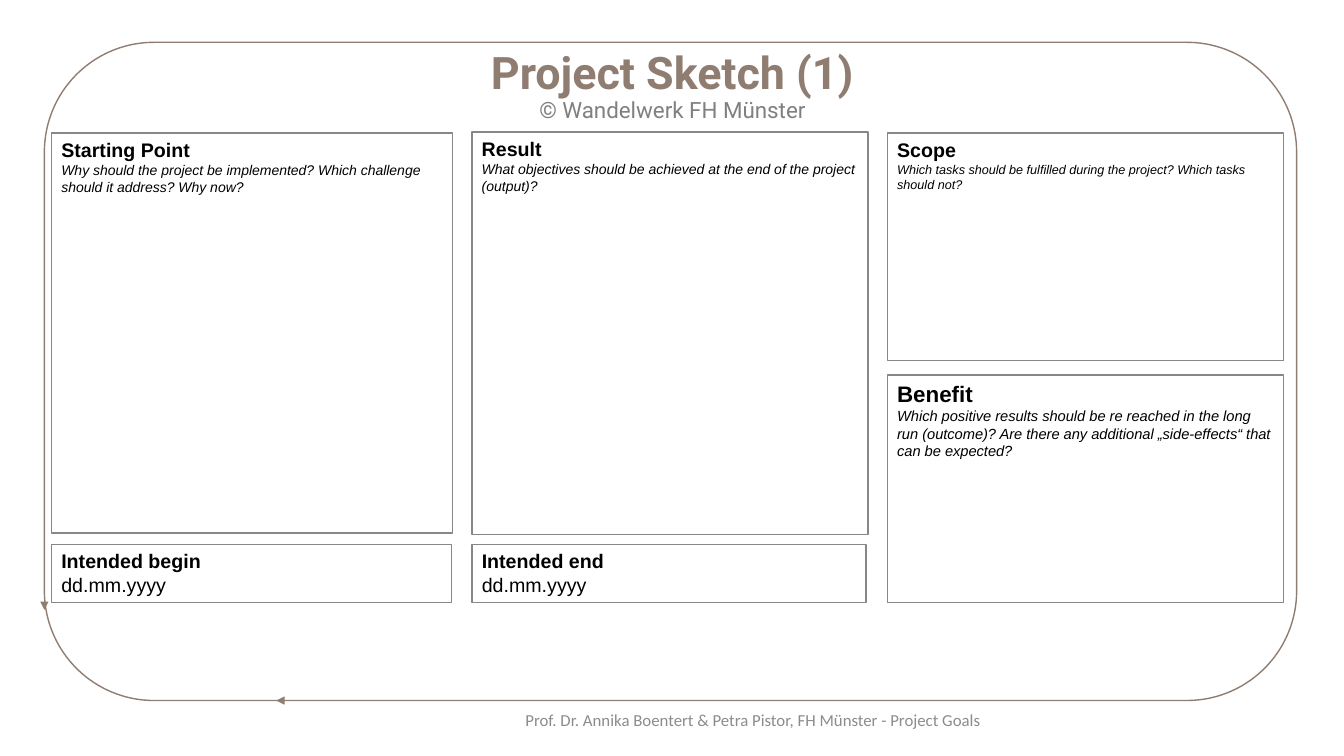
import pptx
import pptx.dml.color
import pptx.enum.shapes
import pptx.enum.text
import pptx.oxml
import pptx.util
from pptx.util import Inches

RGBColor = pptx.dml.color.RGBColor
ANCHOR = pptx.enum.text.MSO_ANCHOR
ALIGN = pptx.enum.text.PP_ALIGN
SHAPES = pptx.enum.shapes.MSO_SHAPE

BROWN = RGBColor(0x90, 0x7D, 0x71)
SUBTITLE_GREY = RGBColor(0x80, 0x80, 0x80)
FOOTER_GREY = RGBColor(0x8C, 0x8C, 0x8C)
BORDER_GREY = RGBColor(0x87, 0x87, 0x87)
WHITE = RGBColor(0xFF, 0xFF, 0xFF)
BLACK = RGBColor(0x00, 0x00, 0x00)

LEFT_X, MIDDLE_X, RIGHT_X = 0.51, 4.68, 8.8
DATE_Y, DATE_HEIGHT = 5.4, 0.58
RIGHT_WIDTH, RIGHT_HEIGHT = 3.93, 2.26

FIELDS = [
    ((LEFT_X, 1.32, 3.98, 3.97), "Starting Point", 14,
     "Why should the project be implemented? Which challenge should it address? Why now?", 10),
    ((MIDDLE_X, 1.31, 3.93, 3.99), "Result", 14,
     "What objectives should be achieved at the end of the project (output)?", 10),
    ((RIGHT_X, 1.32, RIGHT_WIDTH, RIGHT_HEIGHT), "Scope", 14,
     "Which tasks should be fulfilled during the project? Which tasks should not?", 9),
    ((RIGHT_X, 3.72, RIGHT_WIDTH, RIGHT_HEIGHT), "Benefit", 16,
     "Which positive results should be re reached in the long run (outcome)? "
     "Are there any additional „side-effects“ that can be expected?", 10.5),
]
DATES = [
    ((LEFT_X, DATE_Y, 3.97, DATE_HEIGHT), "Intended begin"),
    ((MIDDLE_X, DATE_Y, 3.91, DATE_HEIGHT), "Intended end"),
]


def style_runs(paragraph, font_name, size, color, bold=False, italic=False):
    """Format every run of a paragraph."""
    for run in paragraph.runs:
        run.font.name = font_name
        run.font.size = pptx.util.Pt(size)
        run.font.color.rgb = color
        run.font.bold = bold
        run.font.italic = italic


def add_arrow(slide, start, end):
    """Draw a brown line with an arrowhead at its end."""
    arrow = slide.shapes.add_connector(
        pptx.enum.shapes.MSO_CONNECTOR.STRAIGHT, *map(Inches, start + end))
    arrow.line.color.rgb = BROWN
    arrow.line.width = pptx.util.Pt(1)
    namespace = pptx.oxml.ns.nsdecls("a")
    arrow.line._get_or_add_ln().append(
        pptx.oxml.parse_xml(f'<a:tailEnd {namespace} type="triangle"/>'))
    arrow._element.spPr.append(pptx.oxml.parse_xml(f"<a:effectLst {namespace}/>"))


def add_frame(slide, box):
    """Draw the rounded cycle frame with its two direction arrows."""
    left, top, width, height = box
    frame = slide.shapes.add_shape(SHAPES.ROUNDED_RECTANGLE, *map(Inches, box))
    frame.shadow.inherit = False
    frame.fill.background()
    frame.line.color.rgb = BROWN
    frame.line.width = pptx.util.Pt(1)
    bottom = top + height
    add_arrow(slide, (left + 2.79, bottom), (left + 2.3, bottom))
    add_arrow(slide, (left, top + 5.05), (left, top + 5.63))


def fill_heading(heading, box, text, anchor, size, color, bold):
    """Place a heading placeholder and give it one centred line."""
    heading.left, heading.top, heading.width, heading.height = map(Inches, box)
    frame = heading.text_frame
    frame.text = text
    frame.word_wrap = True
    frame.auto_size = pptx.enum.text.MSO_AUTO_SIZE.NONE
    frame.vertical_anchor = anchor
    line = frame.paragraphs[0]
    line.alignment = ALIGN.CENTER
    line.line_spacing = 0.9
    line.space_before = pptx.util.Pt(0)
    style_runs(line, "Roboto", size, color, bold)


def add_header(slide, box):
    """Fill the title and the subtitle below it."""
    left, top, width, _ = box
    title, subtitle = slide.placeholders
    fill_heading(title, (left, top, width, 0.67), "Project Sketch (1)",
                 ANCHOR.MIDDLE, 32, BROWN, True)
    fill_heading(subtitle, (left, top + 0.52, width, 0.61), "© Wandelwerk FH Münster",
                 ANCHOR.TOP, 16, SUBTITLE_GREY, False)


def add_footer(slide, box):
    """Write the centred author line."""
    footer = slide.shapes.add_textbox(*map(Inches, box)).text_frame
    footer.word_wrap = True
    footer.vertical_anchor = ANCHOR.MIDDLE
    footer.text = "Prof. Dr. Annika Boentert & Petra Pistor, FH Münster - Project Goals"
    footer.paragraphs[0].alignment = ALIGN.CENTER
    style_runs(footer.paragraphs[0], "Calibri", 12, FOOTER_GREY)


def add_field(slide, box, heading, heading_size, prompt, prompt_size, is_date=False):
    """Draw a bordered field with a bold heading and a prompt."""
    field = slide.shapes.add_shape(SHAPES.RECTANGLE, *map(Inches, box))
    field.shadow.inherit = False
    if is_date:
        field.fill.background()
    else:
        field.fill.solid()
        field.fill.fore_color.rgb = WHITE
    field.line.color.rgb = BORDER_GREY
    field.line.width = pptx.util.Pt(1)
    content = field.text_frame
    content.word_wrap = True
    content.vertical_anchor = ANCHOR.TOP
    content.text = f"{heading}\n{prompt}"
    for paragraph in content.paragraphs:
        paragraph.alignment = ALIGN.LEFT
    heading_line, prompt_line = content.paragraphs
    style_runs(heading_line, "Arial", heading_size, BLACK, bold=True)
    style_runs(prompt_line, "Arial", prompt_size, BLACK, italic=not is_date)


def main():
    """Build the project sketch slide."""
    presentation = pptx.Presentation()
    presentation.slide_width = Inches(13.33)
    presentation.slide_height = Inches(7.5)
    slide = presentation.slides.add_slide(presentation.slide_layouts[0])
    add_frame(slide, (0.44, 0.42, 12.42, 6.53))
    add_footer(slide, (2.83, 6.95, 9.28, 0.39))
    add_header(slide, (1.49, 0.41, 10.36, 1.13))
    for box, heading, heading_size, prompt, prompt_size in FIELDS:
        add_field(slide, box, heading, heading_size, prompt, prompt_size)
    for box, heading in DATES:
        add_field(slide, box, heading, 14, "dd.mm.yyyy", 14, is_date=True)
    presentation.save("out.pptx")


if __name__ == "__main__":
    main()
